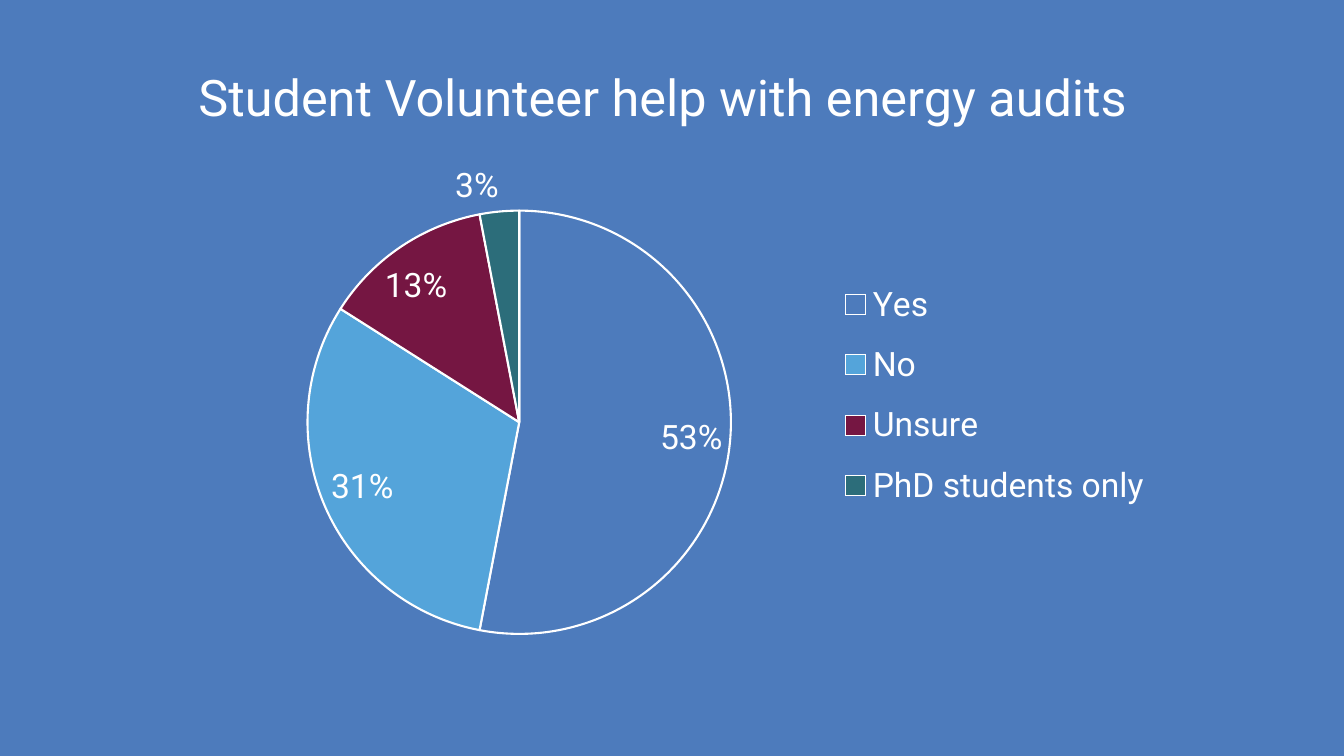
from lxml import etree
from pptx import Presentation
from pptx.chart.data import CategoryChartData
from pptx.dml.color import RGBColor
from pptx.enum.chart import XL_CHART_TYPE, XL_LABEL_POSITION, XL_LEGEND_POSITION
from pptx.enum.text import MSO_ANCHOR
from pptx.oxml.ns import qn
from pptx.util import Inches, Pt

PIE = XL_CHART_TYPE.PIE
BEST_FIT = XL_LABEL_POSITION.BEST_FIT
RIGHT = XL_LEGEND_POSITION.RIGHT
MIDDLE = MSO_ANCHOR.MIDDLE

BLUE = RGBColor(0x4D, 0x7B, 0xBC)
SKY = RGBColor(0x54, 0xA4, 0xDA)
MAROON = RGBColor(0x75, 0x16, 0x42)
TEAL = RGBColor(0x2C, 0x6D, 0x7A)
WHITE = RGBColor(0xFF, 0xFF, 0xFF)
FONT = "Roboto"

TITLE = "Student Volunteer help with energy audits"
ANSWERS = [
    ("Yes", 53, BLUE),
    ("No", 31, SKY),
    ("Unsure", 13, MAROON),
    ("PhD students only", 3, TEAL),
]
LEFT, WIDTH = 1.87, 9.61
CHART_TOP, CHART_HEIGHT = 1.5, 4.93
PIE_BOX = (3.05, 2.09, 4.2, 4.2)
LEGEND_BOX = (8.31, 2.62, 3.15, 2.6)


def style(font, size):
    font.name = FONT
    font.size = Pt(size)
    font.color.rgb = WHITE


def add_layout(parent, index, box, inner=False):
    for old in parent.findall(qn("c:layout")):
        parent.remove(old)
    layout = etree.Element(qn("c:layout"))
    manual = etree.SubElement(layout, qn("c:manualLayout"))
    x, y, w, h = box
    settings = [("layoutTarget", "inner")] if inner else []
    settings += [
        ("xMode", "edge"),
        ("yMode", "edge"),
        ("x", (x - LEFT) / WIDTH),
        ("y", (y - CHART_TOP) / CHART_HEIGHT),
        ("w", w / WIDTH),
        ("h", h / CHART_HEIGHT),
    ]
    for tag, value in settings:
        etree.SubElement(manual, qn("c:" + tag)).set("val", str(value))
    parent.insert(index, layout)


def add_title(s):
    tf = s.shapes.add_textbox(
        Inches(LEFT), Inches(0.27), Inches(WIDTH), Inches(1.45)
    ).text_frame
    tf.word_wrap = True
    tf.vertical_anchor = MIDDLE
    p = tf.paragraphs[0]
    p.line_spacing = 0.9
    r = p.add_run()
    r.text = TITLE
    style(r.font, 36)


def add_pie(s):
    data = CategoryChartData()
    data.categories = [name for name, _, _ in ANSWERS]
    data.add_series("Series 1", [value for _, value, _ in ANSWERS])
    chart = s.shapes.add_chart(
        PIE, Inches(LEFT), Inches(CHART_TOP), Inches(WIDTH), Inches(CHART_HEIGHT), data
    ).chart
    chart.has_title = False
    style(chart.font, 24)

    plot = chart.plots[0]
    plot.vary_by_categories = True
    for i, (_, _, color) in enumerate(ANSWERS):
        fmt = plot.series[0].points[i].format
        fmt.fill.solid()
        fmt.fill.fore_color.rgb = color
        fmt.line.color.rgb = WHITE
        fmt.line.width = Pt(1.5)

    plot.has_data_labels = True
    labels = plot.data_labels
    labels.show_value = False
    labels.show_percentage = True
    labels.number_format = "0%"
    labels.number_format_is_linked = False
    labels.position = BEST_FIT
    style(labels.font, 24)

    chart.has_legend = True
    legend = chart.legend
    legend.position = RIGHT
    legend.include_in_layout = False
    style(legend.font, 24)
    plot_area = chart.element.find(".//" + qn("c:plotArea"))
    add_layout(plot_area, 0, PIE_BOX, inner=True)
    add_layout(chart.element.find(".//" + qn("c:legend")), 1, LEGEND_BOX)


def main():
    prs = Presentation()
    prs.slide_width = Inches(13.33)
    prs.slide_height = Inches(7.5)
    s = prs.slides.add_slide(prs.slide_layouts[6])
    s.background.fill.solid()
    s.background.fill.fore_color.rgb = BLUE
    add_title(s)
    add_pie(s)
    prs.save("out.pptx")


if __name__ == "__main__":
    main()
